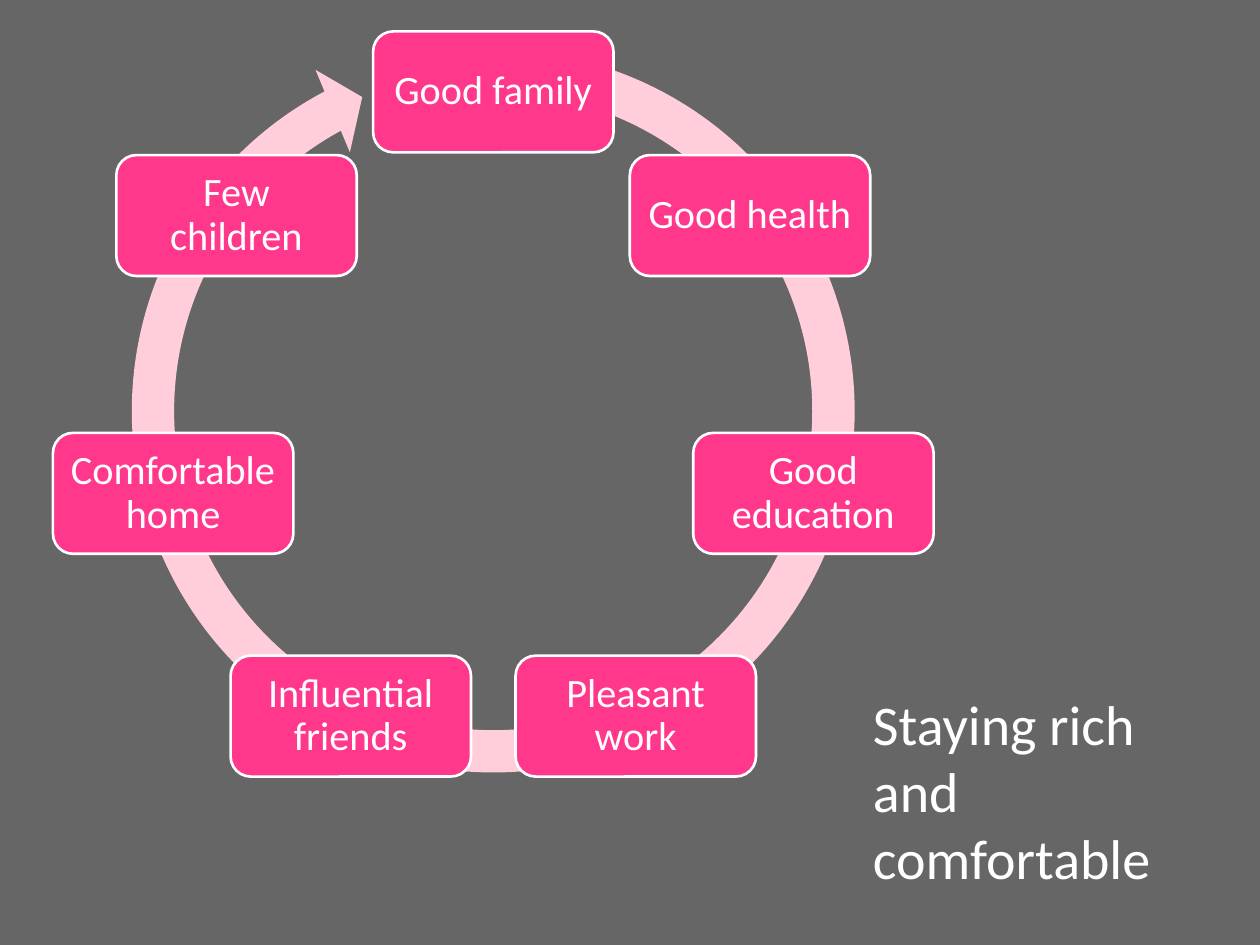
from math import cos, pi, sin

from pptx import Presentation
from pptx.dml.color import RGBColor
from pptx.enum.shapes import MSO_SHAPE
from pptx.enum.text import MSO_ANCHOR, PP_ALIGN
from pptx.util import Inches, Pt

ARROW, NODE = MSO_SHAPE.CIRCULAR_ARROW, MSO_SHAPE.ROUNDED_RECTANGLE
MIDDLE, CENTER = MSO_ANCHOR.MIDDLE, PP_ALIGN.CENTER
COLORS = {"background": "666666", "ring": "FFCEDA", "node": "FF388C", "text": "FFFFFF"}
ADVANTAGES = [
    "Good family", "Good health", "Good education", "Pleasant work",
    "Influential friends", "Comfortable home", "Few children",
]
RING_ANGLES = [0.055, 3.307, 145.109, 169.53, 0.058]
NODE_FRAME = {
    "margin_left": Pt(6), "margin_right": Pt(6),
    "margin_top": Pt(6), "margin_bottom": Pt(6),
    "vertical_anchor": MIDDLE, "word_wrap": True,
}
NODE_PARAGRAPH = {"alignment": CENTER, "line_spacing": 0.9}
WIDTH, HEIGHT = Inches(10), Inches(7.5)


def color(name):
    return RGBColor.from_string(COLORS[name])


def apply_format(target, values):
    for attribute, value in values.items():
        setattr(target, attribute, value)


def write(frame, words, size):
    frame.text = words
    font = frame.paragraphs[0].runs[0].font
    apply_format(font, {"name": "Calibri", "size": Pt(size)})
    font.color.rgb = color("text")


def add_filled(slide, preset, box, fill):
    part = slide.shapes.add_shape(preset, *(round(length) for length in box))
    part.shadow.inherit = False
    part.fill.solid()
    part.fill.fore_color.rgb = color(fill)
    return part


def add_cycle(slide, left, top, width, height):
    node_width, node_height = width * 0.273, height * 0.162
    center_x = left + width / 2
    ring_size = width * 0.874
    ring_box = (center_x - ring_size / 2, top - height * 0.007, ring_size, ring_size)
    ring = add_filled(slide, ARROW, ring_box, "ring")
    ring.line.fill.background()
    for index, angle in enumerate(RING_ANGLES):
        ring.adjustments[index] = angle

    step = 2 * pi / len(ADVANTAGES)
    radius = (width - node_width) / 2 / sin(2 * step)
    center_y = top + node_height / 2 + radius
    for index, advantage in enumerate(ADVANTAGES):
        x = center_x + radius * sin(index * step) - node_width / 2
        y = center_y - radius * cos(index * step) - node_height / 2
        node = add_filled(slide, NODE, (x, y, node_width, node_height), "node")
        node.line.color.rgb = color("text")
        node.line.width = Pt(1.5)
        write(node.text_frame, advantage, 23)
        apply_format(node.text_frame, NODE_FRAME)
        apply_format(node.text_frame.paragraphs[0], NODE_PARAGRAPH)


def add_caption(slide, left, top, width, height):
    box = (round(length) for length in (left, top, width, height))
    caption = slide.shapes.add_textbox(*box).text_frame
    caption.word_wrap = True
    write(caption, "Staying rich and comfortable", 32)


def main():
    deck = Presentation()
    deck.slide_width, deck.slide_height = WIDTH, HEIGHT
    slide = deck.slides.add_slide(deck.slide_layouts[6])
    slide.background.fill.solid()
    slide.background.fill.fore_color.rgb = color("background")
    add_cycle(slide, WIDTH * 0.042, HEIGHT * 0.0333, WIDTH * 0.699, HEIGHT * 0.79)
    add_caption(slide, WIDTH * 0.683, HEIGHT * 0.723, WIDTH * 0.292, HEIGHT * 0.23)
    deck.save("out.pptx")


if __name__ == "__main__":
    main()
